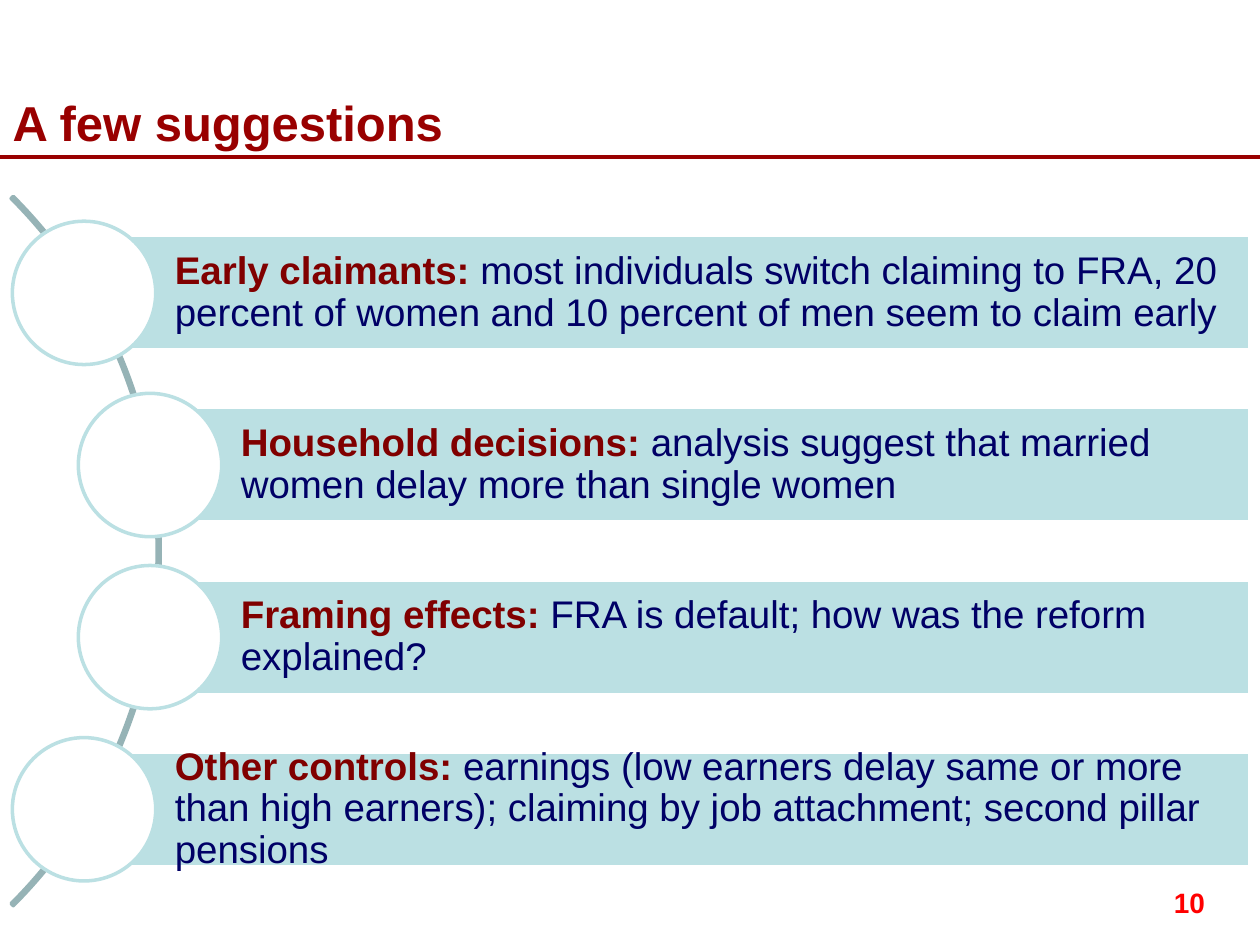
from lxml import etree
from pptx import Presentation
from pptx import util as u
from pptx.dml.color import RGBColor
from pptx.enum import shapes, text
from pptx.oxml import ns

COLORS = {
    "title": "990000", "label": "800000", "body": "000066", "number": "FF0000",
    "arc": "96B3B6", "bar": "BBE0E3", "white": "FFFFFF",
}
SUGGESTIONS = [
    ("Early claimants: ", "most individuals switch claiming to FRA, 20 percent of "
     "women and 10 percent of men seem to claim early"),
    ("Household decisions: ", "analysis suggest that married women delay more than "
     "single women"),
    ("Framing effects: ", "FRA is default; how was the reform explained?"),
    ("Other controls: ", "earnings (low earners delay same or more than high "
     "earners); claiming by job attachment; second pillar pensions"),
]
CIRCLE = u.Cm(2.89)
BAR_HEIGHT = u.Cm(2.31)
ARC_SIZE = u.Cm(20.22)
ARC_RIGHT = u.Cm(3.23)
INDENTS = [u.Cm(0), u.Cm(1.33), u.Cm(1.33), u.Cm(0)]


def color(name):
    return RGBColor.from_string(COLORS[name])


def add_text(paragraph, content, *, size, fill, bold=False):
    run = paragraph.add_run()
    run.text = content
    run.font.name = "Arial"
    run.font.size = u.Pt(size)
    run.font.bold = bold
    run.font.color.rgb = color(fill)


def add_outlined(slide, kind, box, line, fill=None):
    shape = slide.shapes.add_shape(kind, *box)
    shape.shadow.inherit = False
    shape.line.color.rgb = color(line)
    shape.line.width = u.Pt(2)
    if fill:
        shape.fill.solid()
        shape.fill.fore_color.rgb = color(fill)
    else:
        shape.fill.background()
    return shape


def add_header(slide, left, top, width, height):
    """Title standing on a rule that spans the slide."""
    rule = slide.shapes.add_connector(
        shapes.MSO_CONNECTOR.STRAIGHT, left, top + height, left + width, top + height)
    rule.line.color.rgb = color("title")
    rule.line.width = u.Pt(2.25)
    etree.SubElement(rule._element.spPr, ns.qn("a:effectLst"))

    title = slide.shapes.title
    title.left, title.top, title.width, title.height = left, top, u.Cm(22.02), height
    frame = title.text_frame
    frame.auto_size = text.MSO_AUTO_SIZE.NONE
    frame.vertical_anchor = text.MSO_ANCHOR.BOTTOM
    frame.paragraphs[0].alignment = text.PP_ALIGN.LEFT
    add_text(frame.paragraphs[0], "A few suggestions", size=28, fill="title", bold=True)


def add_suggestion(slide, left, top, right, label, detail):
    """Bar of text that starts at the centre of its circle."""
    bar_left = left + CIRCLE // 2
    bar_top = top + (CIRCLE - BAR_HEIGHT) // 2
    bar = add_outlined(slide, shapes.MSO_SHAPE.RECTANGLE,
                       (bar_left, bar_top, right - bar_left, BAR_HEIGHT), "white", "bar")
    frame = bar.text_frame
    frame.word_wrap = True
    frame.vertical_anchor = text.MSO_ANCHOR.MIDDLE
    frame.margin_left = u.Cm(1.83)
    frame.margin_top = frame.margin_right = frame.margin_bottom = u.Cm(0.15)
    paragraph = frame.paragraphs[0]
    paragraph.alignment = text.PP_ALIGN.LEFT
    paragraph.line_spacing = 0.9
    add_text(paragraph, label, size=22, fill="label", bold=True)
    add_text(paragraph, detail, size=22, fill="body")
    add_outlined(slide, shapes.MSO_SHAPE.OVAL, (left, top, CIRCLE, CIRCLE), "bar", "white")


def add_curved_list(slide, left, top, width, height):
    """Suggestions evenly spaced along an arc."""
    arc_top = top + (height - ARC_SIZE) // 2
    arc = add_outlined(slide, shapes.MSO_SHAPE.BLOCK_ARC,
                       (ARC_RIGHT - ARC_SIZE, arc_top, ARC_SIZE, ARC_SIZE), "arc")
    for index, value in enumerate((189, 27, 0.003)):
        arc.adjustments[index] = value

    pitch = (height - CIRCLE) // (len(SUGGESTIONS) - 1)
    for row, (indent, (label, detail)) in enumerate(zip(INDENTS, SUGGESTIONS)):
        add_suggestion(slide, left + indent, top + row * pitch, left + width, label, detail)


def add_page_number(slide, left, top, width, height):
    frame = slide.shapes.add_textbox(left, top, width, height).text_frame
    frame.word_wrap = True
    frame.paragraphs[0].alignment = text.PP_ALIGN.RIGHT
    add_text(frame.paragraphs[0], "10", size=16, fill="number", bold=True)


def main():
    presentation = Presentation()
    presentation.slide_width, presentation.slide_height = u.Cm(25.4), u.Cm(19.05)
    slide = presentation.slides.add_slide(presentation.slide_layouts[5])
    add_header(slide, u.Cm(0), u.Cm(0.2), presentation.slide_width, u.Cm(2.97))
    add_curved_list(slide, u.Cm(0.25), u.Cm(4.46), u.Cm(24.94), u.Cm(13.3))
    add_page_number(slide, u.Cm(18.62), u.Cm(17.73), u.Cm(5.92), u.Cm(1.32))
    presentation.save("out.pptx")


if __name__ == "__main__":
    main()
